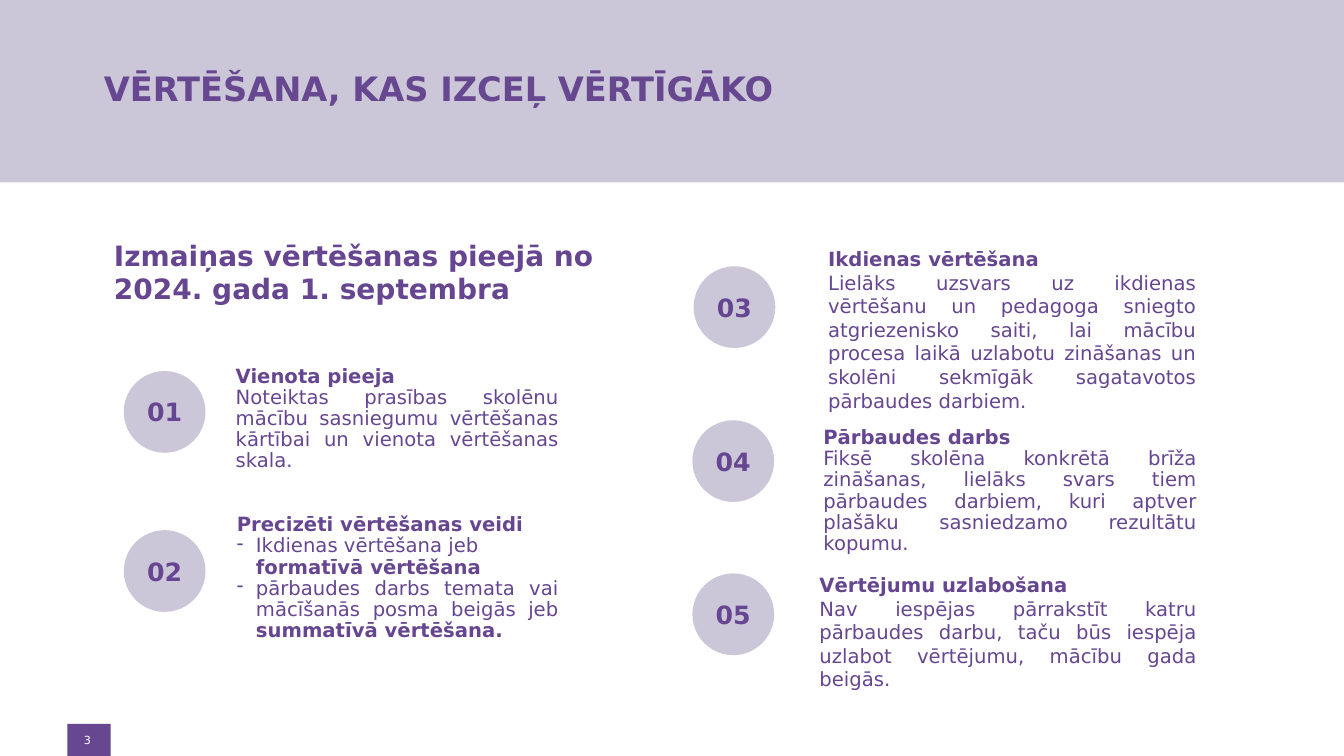
"""Builds the slide on changes in school assessment."""
from lxml import etree
from pptx import Presentation
from pptx import util as u
from pptx.dml.color import RGBColor
from pptx.enum import shapes, text
from pptx.oxml.ns import qn

FONT = "DejaVu Sans"
LILAC, PURPLE, VIOLET, WHITE = "CBC7D8", "664790", "664690", "FFFFFF"
LEFT, CENTER, JUSTIFY = text.PP_ALIGN.LEFT, text.PP_ALIGN.CENTER, text.PP_ALIGN.JUSTIFY

deck = Presentation()
deck.slide_width, deck.slide_height = u.Cm(33.87), u.Cm(19.05)
page = deck.slides.add_slide(deck.slide_layouts[6])


def add_box(place, kind=None, fill=None, margins=(0.25, 0.13, 0.25, 0.13)):
    """Add a filled shape, or a text box when no kind is given."""
    place = [u.Cm(length) for length in place]
    if kind is None:
        box = page.shapes.add_textbox(*place)
    else:
        box = page.shapes.add_shape(kind, *place)
        box.shadow.inherit = False
        box.fill.solid()
        box.fill.fore_color.rgb = RGBColor.from_string(fill)
        box.line.fill.background()
    frame = box.text_frame
    frame.word_wrap = True
    frame.vertical_anchor = text.MSO_ANCHOR.MIDDLE
    frame.margin_left, frame.margin_top, frame.margin_right, frame.margin_bottom = map(u.Cm, margins)
    return box


def write(para, runs, size, color=VIOLET, align=LEFT, spacing=1.0):
    """Fill a paragraph with (wording, bold) runs."""
    para.alignment = align
    para.line_spacing = spacing
    for wording, bold in runs:
        span = para.add_run()
        span.text = wording
        span.font.name, span.font.size, span.font.bold = FONT, u.Pt(size), bold
        span.font.color.rgb = RGBColor.from_string(color)


add_box((0, 0, 33.87, 4.6), shapes.MSO_SHAPE.RECTANGLE, LILAC)
add_box((1.7, 18.24, 1.09, 0.81), shapes.MSO_SHAPE.RECTANGLE, PURPLE)

title = add_box((2.62, 0.81, 17.96, 2.84), margins=(0, 0.13, 0.25, 0.13))
write(title.text_frame.paragraphs[0], [("VĒRTĒŠANA, KAS IZCEĻ VĒRTĪGĀKO", True)], 24, PURPLE)

page_number = add_box((1.8, 18.24, 0.81, 0.81), margins=(0.1, 0.1, 0.1, 0.1))
write(page_number.text_frame.paragraphs[0], [("3", False)], 8, WHITE, CENTER)

subtitle = add_box((2.62, 4.88, 13.21, 3.94))
write(subtitle.text_frame.paragraphs[0],
      [("Izmaiņas vērtēšanas pieejā no 2024. gada 1. septembra", True)], 20)

changes = [
    ((3.12, 9.35), (5.69, 8.99, 8.64, 3.15), 0.9, "Vienota pieeja", [
        (JUSTIFY, False, [("Noteiktas prasības skolēnu mācību sasniegumu vērtēšanas "
                           "kārtībai un vienota vērtēšanas skala.", False)])]),
    ((3.12, 13.36), (5.72, 12.85, 8.61, 3.45), 0.9, "Precizēti vērtēšanas veidi", [
        (LEFT, True, [("Ikdienas vērtēšana jeb ", False), ("formatīvā vērtēšana", True)]),
        (JUSTIFY, True, [("pārbaudes darbs temata vai mācīšanās posma beigās jeb ", False),
                         ("summatīvā vērtēšana.", True)])]),
    ((17.48, 6.71), (20.62, 6.17, 9.78, 4.27), 1.0, "Ikdienas vērtēšana", [
        (JUSTIFY, False, [("Lielāks uzsvars uz ikdienas vērtēšanu un pedagoga sniegto "
                           "atgriezenisko saiti, lai mācību procesa laikā uzlabotu zināšanas "
                           "un skolēni sekmīgāk sagatavotos pārbaudes darbiem.", False)])]),
    ((17.45, 10.59), (20.5, 10.8, 9.91, 3.15), 0.9, "Pārbaudes darbs", [
        (JUSTIFY, False, [("Fiksē skolēna konkrētā brīža zināšanas, lielāks svars tiem "
                           "pārbaudes darbiem, kuri aptver plašāku sasniedzamo rezultātu "
                           "kopumu.", False)])]),
    ((17.45, 14.45), (20.4, 14.35, 10.01, 3.15), 1.0, "Vērtējumu uzlabošana", [
        (JUSTIFY, False, [("Nav iespējas pārrakstīt katru pārbaudes darbu, taču būs iespēja "
                           "uzlabot vērtējumu, mācību gada beigās.", False)])]),
]

for number, (corner, place, spacing, heading, body) in enumerate(changes, 1):
    circle = add_box((*corner, 2.06, 2.06), shapes.MSO_SHAPE.OVAL, LILAC, (0, 0, 0, 0))
    write(circle.text_frame.paragraphs[0], [(f"{number:02}", True)], 18, align=CENTER)

    frame = add_box(place).text_frame
    write(frame.paragraphs[0], [(heading, True)], 14, spacing=spacing)
    for align, bulleted, runs in body:
        para = frame.add_paragraph()
        write(para, runs, 14, align=align, spacing=spacing)
        if bulleted:
            properties = para._p.get_or_add_pPr()
            properties.set("marL", str(u.Cm(0.48)))
            properties.set("indent", str(-u.Cm(0.48)))
            bullet_color = etree.SubElement(properties, qn("a:buClr"))
            etree.SubElement(bullet_color, qn("a:srgbClr"), val=PURPLE)
            etree.SubElement(properties, qn("a:buChar"), char="-")

deck.save("out.pptx")
